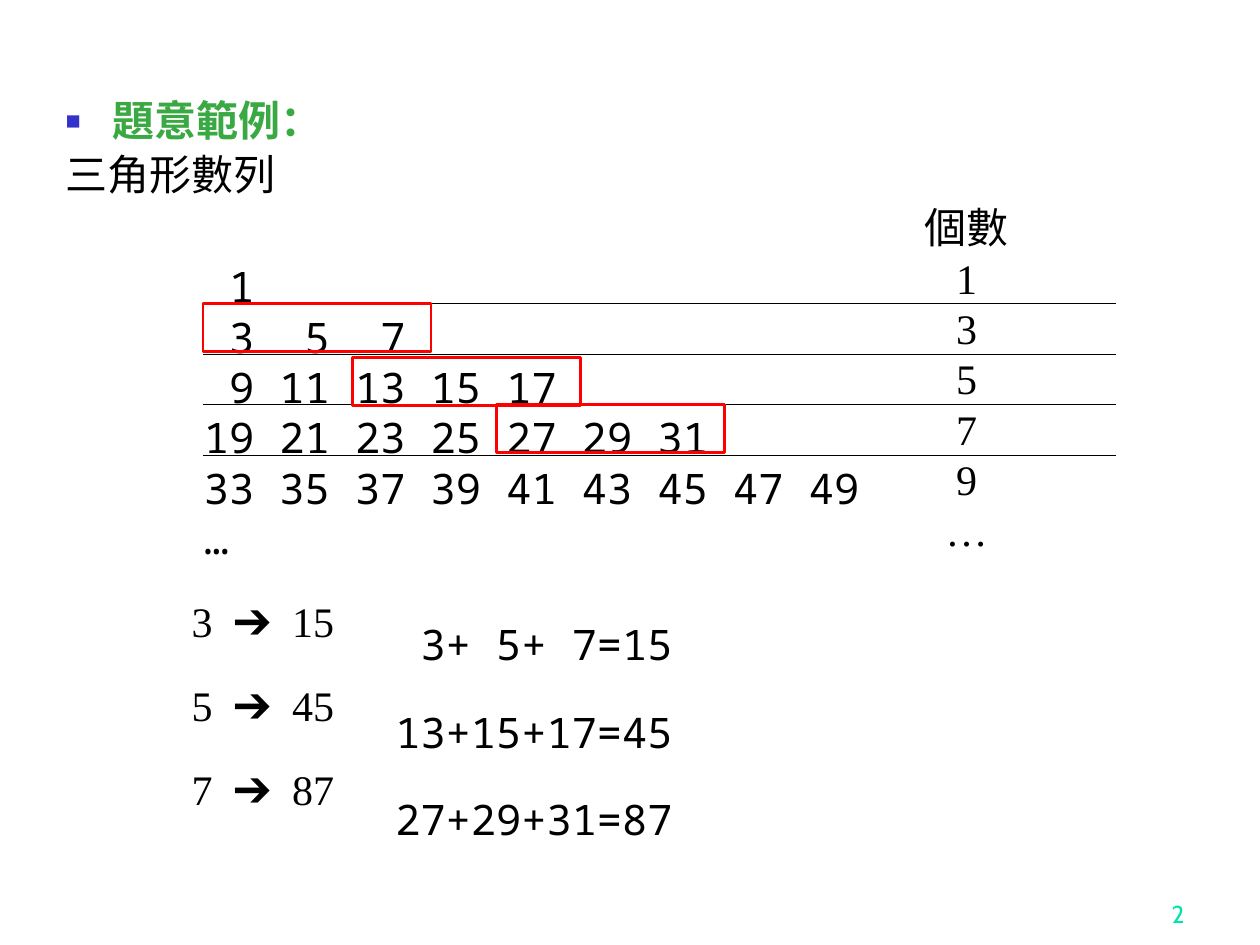
"""Build the slide on a triangular sequence of odd numbers."""
from dataclasses import dataclass

import lxml.etree
import pptx
import pptx.dml.color
import pptx.enum.shapes
import pptx.enum.text
import pptx.oxml.ns
import pptx.util

Cm = pptx.util.Cm
Pt = pptx.util.Pt
RGB = pptx.dml.color.RGBColor
Align = pptx.enum.text.PP_ALIGN
Anchor = pptx.enum.text.MSO_ANCHOR
Fit = pptx.enum.text.MSO_AUTO_SIZE

BLACK = RGB(0, 0, 0)
RED = RGB(0xFF, 0, 0)
GREEN = RGB(0x3B, 0xA9, 0x43)
BLUE = RGB(0x33, 0x33, 0xCC)
MINT = RGB(0, 0xE4, 0xA8)
SERIF = "Times New Roman"
MONO = "Noto Sans Mono"


@dataclass
class Label:
    left: float
    top: float
    width: float
    height: float
    lines: list[str]
    font: str = MONO
    rest: Align = Align.LEFT


@dataclass
class Frame:
    left: float
    top: float


LABELS = [
    Label(3.86, 5.13, 13.82, 6.4,
          [" 1", " 3  5  7", " 9 11 13 15 17", "19 21 23 25 27 29 31",
           "33 35 37 39 41 43 45 47 49", "…"]),
    Label(18.39, 3.94, 2.24, 7.44,
          ["個數", "1", "3", "5", "7", "9", "…"], SERIF, Align.CENTER),
]
SUMS = [" 3+ 5+ 7=15", "13+15+17=45", "27+29+31=87"]
FRAMES = [Frame(4.09, 6.12), Frame(7.11, 7.21), Frame(10.01, 8.15)]


def add_run(para, text: str, font: str, size: float = 24,
            color: RGB = BLACK, bold: bool = False) -> None:
    run = para.add_run()
    run.text = text
    run.font.name = font
    run.font.size = Pt(size)
    run.font.bold = bold
    run.font.color.rgb = color


def add_para(frame, first: bool):
    return frame.paragraphs[0] if first else frame.add_paragraph()


def add_label(slide, label: Label) -> None:
    box = slide.shapes.add_textbox(
        Cm(label.left), Cm(label.top), Cm(label.width), Cm(label.height))
    box.text_frame.word_wrap = False
    box.text_frame.auto_size = Fit.SHAPE_TO_FIT_TEXT
    for row, text in enumerate(label.lines):
        para = add_para(box.text_frame, row == 0)
        para.alignment = label.rest if row else Align.LEFT
        add_run(para, text, label.font)


def add_rule(slide, top: float) -> None:
    rule = slide.shapes.add_connector(
        pptx.enum.shapes.MSO_CONNECTOR.STRAIGHT,
        Cm(4.09), Cm(top), Cm(22.5), Cm(top))
    rule.line.color.rgb = BLACK
    rule.line.width = Pt(0.75)
    spot = rule.element.find(pptx.oxml.ns.qn("p:spPr"))
    lxml.etree.SubElement(spot, pptx.oxml.ns.qn("a:effectLst"))


def add_frame(slide, frame: Frame) -> None:
    box = slide.shapes.add_shape(
        pptx.enum.shapes.MSO_SHAPE.RECTANGLE,
        Cm(frame.left), Cm(frame.top), Cm(4.6), Cm(0.97))
    box.shadow.inherit = False
    box.fill.background()
    box.line.color.rgb = RED
    box.line.width = Pt(1.5)


def set_mark(para, left: float, hang: float, mark: str = "") -> None:
    prop = para._p.get_or_add_pPr()
    prop.set("marL", str(Cm(left)))
    prop.set("indent", str(Cm(-hang)))

    def add(tag: str):
        return lxml.etree.SubElement(prop, pptx.oxml.ns.qn(tag))

    if not mark:
        add("a:buNone")
        return
    tint = lxml.etree.SubElement(add("a:buClr"), pptx.oxml.ns.qn("a:srgbClr"))
    tint.set("val", str(BLUE))
    add("a:buSzPct").set("val", "60000")
    add("a:buChar").set("char", mark)


def add_body(slide) -> None:
    body = slide.placeholders[1]
    body.left, body.top = Cm(1.07), Cm(1.9)
    body.width, body.height = Cm(22.43), Cm(15.62)
    frame = body.text_frame
    frame.auto_size = Fit.NONE
    frame.vertical_anchor = Anchor.TOP

    head = add_para(frame, True)
    head.line_spacing, head.space_before = 0.9, Pt(4.8)
    set_mark(head, 0.95, 0.95, "■")
    add_run(head, "題意範例：", SERIF, color=GREEN, bold=True)

    name = add_para(frame, False)
    name.line_spacing, name.space_before = 0.9, Pt(4.8)
    set_mark(name, 0, 0)
    add_run(name, "三角形數列", SERIF)

    for row, text in enumerate(["3  ➔  15", "5  ➔  45", "7  ➔  87"]):
        para = add_para(frame, False)
        para.line_spacing = 1.5
        para.space_before = Pt(4.8 if row else 212)
        set_mark(para, 2.54, 0)
        add_run(para, text, SERIF)


def add_page(slide) -> None:
    box = slide.shapes.add_textbox(Cm(18.85), Cm(17.58), Cm(5.28), Cm(1.27))
    frame = box.text_frame
    frame.word_wrap = True
    frame.vertical_anchor = Anchor.BOTTOM
    frame.paragraphs[0].alignment = Align.RIGHT
    add_run(frame.paragraphs[0], "2", "Cabin", 14, MINT)


def main() -> None:
    deck = pptx.Presentation()
    deck.slide_width, deck.slide_height = Cm(25.4), Cm(19.05)
    slide = deck.slides.add_slide(deck.slide_layouts[1])
    title = slide.shapes.title.element
    title.getparent().remove(title)
    add_page(slide)
    add_body(slide)
    for label in LABELS:
        add_label(slide, label)
    for row in range(4):
        add_rule(slide, 6.12 + 1.02 * row)
    for frame in FRAMES:
        add_frame(slide, frame)
    for row, text in enumerate(SUMS):
        add_label(slide, Label(7.72, 12.34 + 1.77 * row, 6.15, 1.27, [text]))
    deck.save("out.pptx")


if __name__ == "__main__":
    main()
